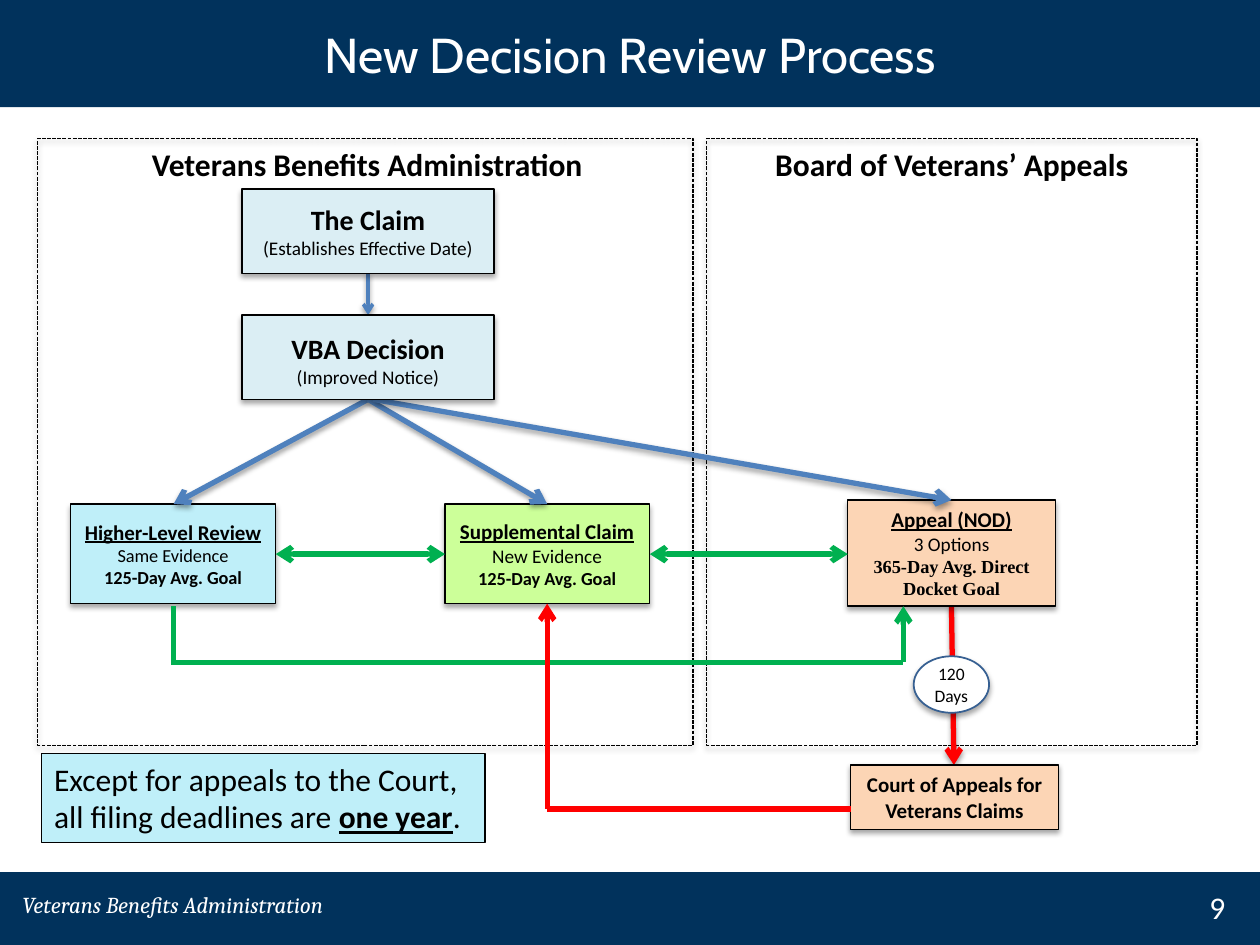
from dataclasses import dataclass
from typing import Optional

from lxml.etree import SubElement
from pptx import Presentation
from pptx.dml.color import RGBColor
from pptx.enum.dml import MSO_LINE_DASH_STYLE as Dash
from pptx.enum.shapes import MSO_CONNECTOR, MSO_SHAPE as Preset
from pptx.enum.text import MSO_ANCHOR as Anchor, PP_ALIGN as Align
from pptx.oxml.ns import qn
from pptx.util import Cm, Pt

NAVY = RGBColor(0x01, 0x32, 0x5C)
WHITE = RGBColor(0xFF, 0xFF, 0xFF)
BLACK = RGBColor(0x00, 0x00, 0x00)
PEACH = RGBColor(0xFC, 0xD5, 0xB5)
LIME = RGBColor(0xCC, 0xFF, 0x99)
AQUA = RGBColor(0xBF, 0xEF, 0xF9)
PALE_BLUE = RGBColor(0xDB, 0xEE, 0xF4)
BLUE = RGBColor(0x4F, 0x81, 0xBD)
DARK_BLUE = RGBColor(0x37, 0x60, 0x92)
GREEN = RGBColor(0x00, 0xB0, 0x50)
RED = RGBColor(0xFF, 0x00, 0x00)

HEADING = {"bold": True, "underline": True}
BOLD = {"bold": True}


@dataclass
class Span:
    text: str
    size: float
    style: Optional[dict] = None


@dataclass
class Block:
    left: float
    top: float
    width: float
    height: float
    fill: Optional[RGBColor] = None
    paras: tuple = ()
    line: Optional[RGBColor] = BLACK
    weight: float = 0.75
    dash: Optional[Dash] = None
    shadow: bool = True
    preset: Preset = Preset.RECTANGLE
    align: Align = Align.CENTER
    anchor: Anchor = Anchor.MIDDLE
    insets: Optional[dict] = None


@dataclass
class Label:
    left: float
    top: float
    width: float
    height: float
    span: Span
    align: Align = Align.LEFT


@dataclass
class Link:
    start: tuple
    end: tuple
    color: RGBColor
    weight: float = 3
    arrows: tuple = ("tailEnd",)
    shadow: bool = False


def apply(target, values: dict) -> None:
    for name, value in values.items():
        setattr(target, name, value)


def write(frame, paras, align: Align, color: RGBColor) -> None:
    frame.word_wrap = True
    for index, spans in enumerate(paras):
        para = frame.paragraphs[0] if index == 0 else frame.add_paragraph()
        para.alignment = align
        for span in spans:
            run = para.add_run()
            run.text = span.text
            run.font.color.rgb = color
            apply(run.font, {"name": "Calibri", "size": Pt(span.size), **(span.style or {})})


def add_shadow(effects, opacity: int, distance: float) -> None:
    shadow = SubElement(effects, qn("a:outerShdw"), blurRad=str(Pt(3.1)),
                        dist=str(Pt(distance)), dir="5400000", rotWithShape="0")
    color = SubElement(shadow, qn("a:srgbClr"), val=str(BLACK))
    SubElement(color, qn("a:alpha"), val=str(opacity * 1000))


def draw_block(page, block: Block):
    box = page.shapes.add_shape(block.preset, Cm(block.left), Cm(block.top),
                                Cm(block.width), Cm(block.height))
    if block.fill is None:
        box.fill.background()
    else:
        box.fill.solid()
        box.fill.fore_color.rgb = block.fill
    if block.line is None:
        box.line.fill.background()
    else:
        box.line.color.rgb = block.line
        apply(box.line, {"width": Pt(block.weight), "dash_style": block.dash})
    box.shadow.inherit = False
    if block.shadow:
        add_shadow(box.element.spPr.find(qn("a:effectLst")), 35, 1.8)
    apply(box.text_frame, {"vertical_anchor": block.anchor, **(block.insets or {})})
    write(box.text_frame, block.paras, block.align, BLACK)
    return box


def draw_label(page, label: Label, color: RGBColor = BLACK) -> None:
    box = page.shapes.add_textbox(Cm(label.left), Cm(label.top), Cm(label.width), Cm(label.height))
    write(box.text_frame, [[label.span]], label.align, color)


def draw_link(page, link: Link) -> None:
    ends = [Cm(value) for value in link.start + link.end]
    connector = page.shapes.add_connector(MSO_CONNECTOR.STRAIGHT, *ends)
    connector.line.color.rgb = link.color
    connector.line.width = Pt(link.weight)
    properties = connector.element.spPr
    for arrow in link.arrows:
        SubElement(properties.find(qn("a:ln")), qn(f"a:{arrow}"), type="arrow")
    effects = SubElement(properties, qn("a:effectLst"))
    if link.shadow:
        add_shadow(effects, 38, 1.6)


STEP_X, REVIEW_X, CLAIM_X, APPEAL_X, RETURN_X = 7.42, 3.5, 11.03, 19.18, 18.21
REVIEW_TOP, REVIEW_BOTTOM, APPEAL_TOP, APPEAL_BOTTOM = 10.16, 12.17, 10.08, 12.22
SWAP_Y, RETURN_Y, COURT_Y = 11.17, 13.35, 16.31
BOTH = ("headEnd", "tailEnd")
GOAL = (Span("125-Day Avg. Goal", 10.5, BOLD),)
FLAT = {f"margin_{side}": 0 for side in ("left", "top", "right", "bottom")}

DIAGRAM = (
    Block(14.25, 2.79, 9.88, 12.24, dash=Dash.SQUARE_DOT),
    Block(0.76, 2.79, 13.21, 12.24, dash=Dash.SQUARE_DOT),
    Link((APPEAL_X, APPEAL_BOTTOM), (19.23, 15.42), RED, shadow=True),
    Block(17.09, APPEAL_TOP, 4.19, 2.14, PEACH, (
        (Span("Appeal (NOD)", 12, HEADING),),
        (Span("3 Options", 11),),
        (Span("365-Day Avg. Direct Docket Goal", 10.5, {"bold": True, "name": "Times New Roman"}),))),
    Block(8.97, REVIEW_TOP, 4.12, 2.01, LIME, (
        (Span("Supplemental Claim", 12, HEADING),), (Span("New Evidence", 11),), GOAL)),
    Block(1.42, REVIEW_TOP, 4.14, 2.01, AQUA, (
        (Span("Higher-Level Review", 12, HEADING),), (Span("Same Evidence", 10.5),), GOAL)),
    Link((STEP_X, 5.5), (STEP_X, 6.35), BLUE, weight=2, shadow=True),
    Link((STEP_X, 8.05), (REVIEW_X, REVIEW_TOP), BLUE, shadow=True),
    Link((STEP_X, 8.05), (CLAIM_X, REVIEW_TOP), BLUE, shadow=True),
    Link((7.52, 8.05), (APPEAL_X, APPEAL_TOP), BLUE, shadow=True),
    Block(4.88, 6.35, 5.08, 1.7, PALE_BLUE, (
        (Span("VBA Decision", 16, BOLD),), (Span("(Improved Notice)", 11),)),
        insets={"margin_top": Cm(0.25)}),
    Block(4.88, 3.81, 5.08, 1.7, PALE_BLUE, (
        (Span("The Claim", 16, BOLD),), (Span("(Establishes Effective Date)", 11),))),
    Label(0.84, 2.79, 13.13, 1.73, Span("Veterans Benefits Administration", 18, BOLD), Align.CENTER),
    Label(14.25, 2.79, 9.88, 2.54, Span("Board of Veterans’ Appeals", 18, BOLD), Align.CENTER),
    Block(18.42, 13.23, 1.52, 1.14, WHITE, ((Span("120 Days", 10),),), DARK_BLUE, 1,
          preset=Preset.OVAL, insets=FLAT),
    Block(17.15, 15.42, 4.19, 1.3, PEACH, (
        (Span("Court of Appeals for Veterans Claims", 12, BOLD),),)),
    Link((5.56, SWAP_Y), (8.97, SWAP_Y), GREEN, arrows=BOTH),
    Link((13.1, SWAP_Y), (17.09, SWAP_Y), GREEN, arrows=BOTH),
    Link((REVIEW_X, 13.41), (REVIEW_X, APPEAL_BOTTOM), GREEN, arrows=()),
    Link((RETURN_X, RETURN_Y), (RETURN_X, APPEAL_BOTTOM), GREEN),
    Link((REVIEW_X, RETURN_Y), (RETURN_X, RETURN_Y), GREEN, arrows=()),
    Link((CLAIM_X, COURT_Y), (17.15, COURT_Y), RED, arrows=()),
    Link((CLAIM_X, COURT_Y), (CLAIM_X, REVIEW_BOTTOM), RED),
    Block(0.84, 15.19, 8.94, 1.8, AQUA, (
        (Span("Except for appeals to the Court,", 18),),
        (Span("all filing deadlines are ", 18), Span("one year", 18, HEADING), Span(".", 18))),
        shadow=False, align=Align.LEFT, anchor=Anchor.TOP),
)
DRAWERS = {Block: draw_block, Label: draw_label, Link: draw_link}


def draw_frame(page) -> None:
    for top, height in ((0, 2.16), (17.58, 1.47)):
        draw_block(page, Block(0, top, 25.4, height, NAVY, line=None, shadow=False))
    title = page.shapes.title
    title.element.getparent().append(title.element)
    apply(title, {"left": Cm(1.27), "top": Cm(0), "width": Cm(22.86), "height": Cm(2.16)})
    title.text_frame.vertical_anchor = Anchor.MIDDLE
    write(title.text_frame, [[Span("New Decision Review Process", 28, {"name": "Cabin"})]],
          Align.CENTER, WHITE)
    footer = Span("Veterans Benefits Administration", 13, {"name": "Cambria", "italic": True})
    draw_label(page, Label(0.2, 17.83, 12.32, 0.81, footer), WHITE)
    draw_label(page, Label(24.13, 17.78, 1.27, 1.02, Span("9", 18)), WHITE)


def main() -> None:
    deck = Presentation()
    apply(deck, {"slide_width": Cm(25.4), "slide_height": Cm(19.05)})
    page = deck.slides.add_slide(deck.slide_layouts[5])
    draw_frame(page)
    for item in DIAGRAM:
        DRAWERS[type(item)](page, item)
    deck.save("out.pptx")


if __name__ == "__main__":
    main()
